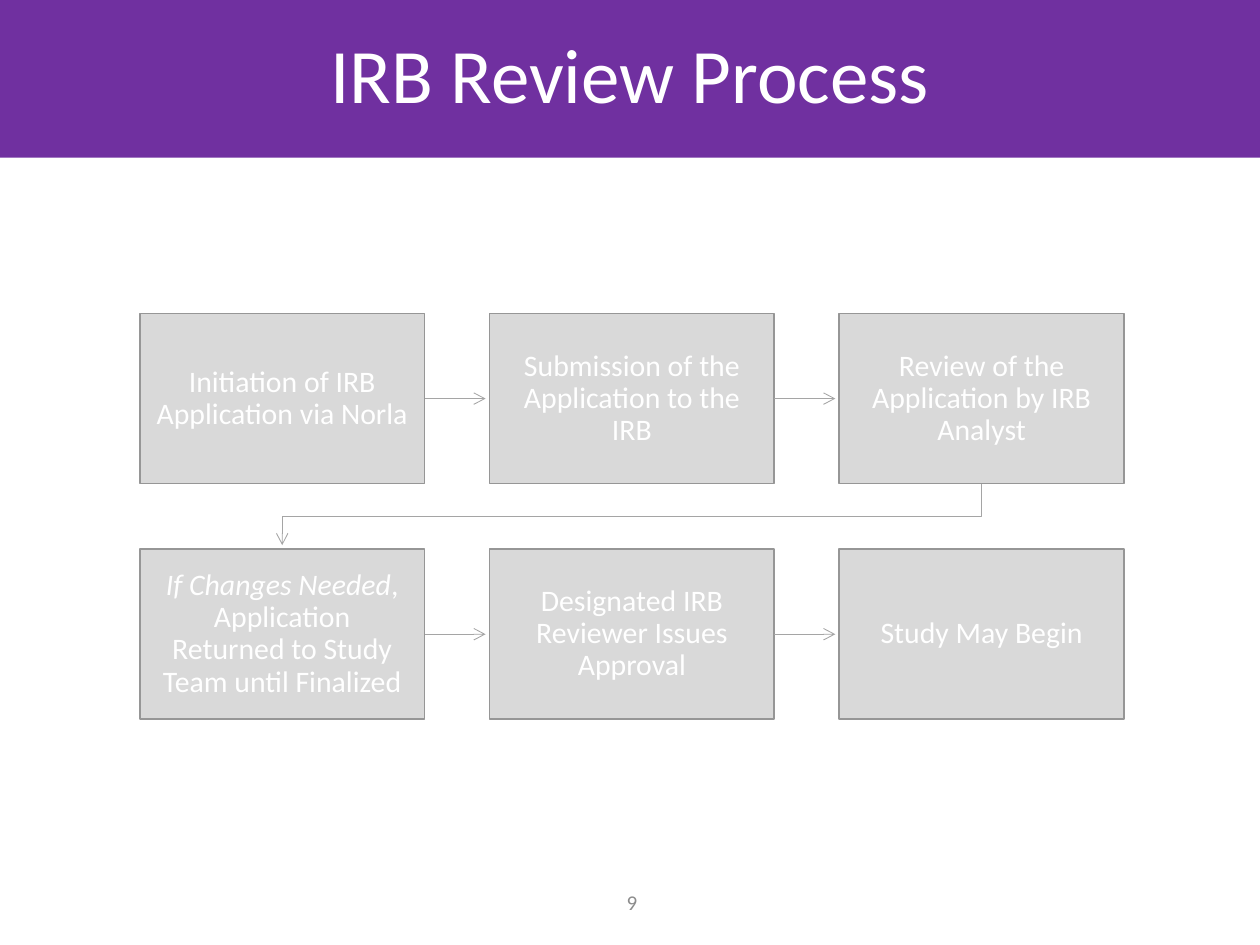
from dataclasses import dataclass

import lxml.etree
import pptx
import pptx.dml.color
import pptx.enum.shapes
import pptx.enum.text
import pptx.oxml.ns
import pptx.util

Cm = pptx.util.Cm
Pt = pptx.util.Pt
qn = pptx.oxml.ns.qn

COLORS = {
    "banner": "7030A0",
    "box": "D9D9D9",
    "border": "969696",
    "arrow": "A5A5A5",
    "text": "FFFFFF",
    "number": "8C8C8C",
}
FONT = "Calibri"
COLUMNS = 3
LEFT, TOP = 2.82, 6.32
BOX_W, BOX_H = 5.74, 3.43
STEP_X, STEP_Y = 7.05, 4.75
INSET = 0.33
ARROW_GAP = 0.08


@dataclass
class Step:
    text: str
    lead: str = ""


STEPS = [
    Step("Initiation of IRB Application via Norla"),
    Step("Submission of the Application to the IRB"),
    Step("Review of the Application by IRB Analyst"),
    Step(", Application Returned to Study Team until Finalized", "If Changes Needed"),
    Step("Designated IRB Reviewer Issues Approval"),
    Step("Study May Begin"),
]


def rgb(name: str) -> pptx.dml.color.RGBColor:
    return pptx.dml.color.RGBColor.from_string(COLORS[name])


def write(s, step: Step, size: float, color: str, spacing: float, inset: float) -> None:
    tf = s.text_frame
    tf.word_wrap = True
    tf.vertical_anchor = pptx.enum.text.MSO_ANCHOR.MIDDLE
    tf.margin_left = tf.margin_right = tf.margin_top = tf.margin_bottom = Cm(inset)
    p = tf.paragraphs[0]
    p.alignment = pptx.enum.text.PP_ALIGN.CENTER
    p.line_spacing = spacing
    p.font.name = FONT
    p.font.size = Pt(size)
    p.font.color.rgb = rgb(color)
    if step.lead:
        r = p.add_run()
        r.text = step.lead
        r.font.italic = True
    p.add_run().text = step.text


def add_box(shapes, x: float, y: float, w: float, h: float, fill: str):
    s = shapes.add_shape(
        pptx.enum.shapes.MSO_SHAPE.RECTANGLE, Cm(x), Cm(y), Cm(w), Cm(h)
    )
    s.shadow.inherit = False
    s.fill.solid()
    s.fill.fore_color.rgb = rgb(fill)
    return s


def add_step(shapes, index: int, step: Step):
    row, col = divmod(index, COLUMNS)
    s = add_box(shapes, LEFT + col * STEP_X, TOP + row * STEP_Y, BOX_W, BOX_H, "box")
    s.line.color.rgb = rgb("border")
    s.line.width = Pt(1)
    write(s, step, 17, "text", 0.9, INSET)
    return s


def style_arrow(s) -> None:
    s.line.color.rgb = rgb("arrow")
    s.line.width = Pt(0.5)
    ln = s.element.spPr.find(qn("a:ln"))
    lxml.etree.SubElement(ln, qn("a:tailEnd"), type="arrow")


def add_straight_arrow(shapes, start, end) -> None:
    y = start.top + start.height // 2
    s = shapes.add_connector(
        pptx.enum.shapes.MSO_CONNECTOR.STRAIGHT,
        start.left + start.width, y, end.left - Cm(ARROW_GAP), y,
    )
    s.begin_connect(start, 3)
    style_arrow(s)
    lxml.etree.SubElement(s.element.spPr, qn("a:effectLst"))


def add_return_arrow(shapes, start, end) -> None:
    x1 = start.left + start.width // 2
    x2 = end.left + end.width // 2
    bottom = start.top + start.height
    middle = (bottom + end.top) // 2
    builder = shapes.build_freeform(x1, bottom)
    builder.add_line_segments(
        [(x1, middle), (x2, middle), (x2, end.top - Cm(ARROW_GAP))], close=False
    )
    s = builder.convert_to_shape()
    s.fill.background()
    style_arrow(s)
    s.shadow.inherit = False


def main() -> None:
    prs = pptx.Presentation()
    prs.slide_width, prs.slide_height = Cm(25.4), Cm(19.05)
    shapes = prs.slides.add_slide(prs.slide_layouts[6]).shapes

    title = add_box(shapes, 0, 0, 25.4, 3.18, "banner")
    title.line.fill.background()
    write(title, Step("IRB Review Process"), 44, "text", 0.9, 0.13)

    boxes = [add_step(shapes, i, step) for i, step in enumerate(STEPS)]
    for i, (start, end) in enumerate(zip(boxes, boxes[1:]), 1):
        if i % COLUMNS:
            add_straight_arrow(shapes, start, end)
        else:
            add_return_arrow(shapes, start, end)

    number = shapes.add_textbox(Cm(11.89), Cm(17.68), Cm(1.7), Cm(1.02))
    write(number, Step("9"), 12, "number", 1.0, 0.13)

    prs.save("out.pptx")


if __name__ == "__main__":
    main()
